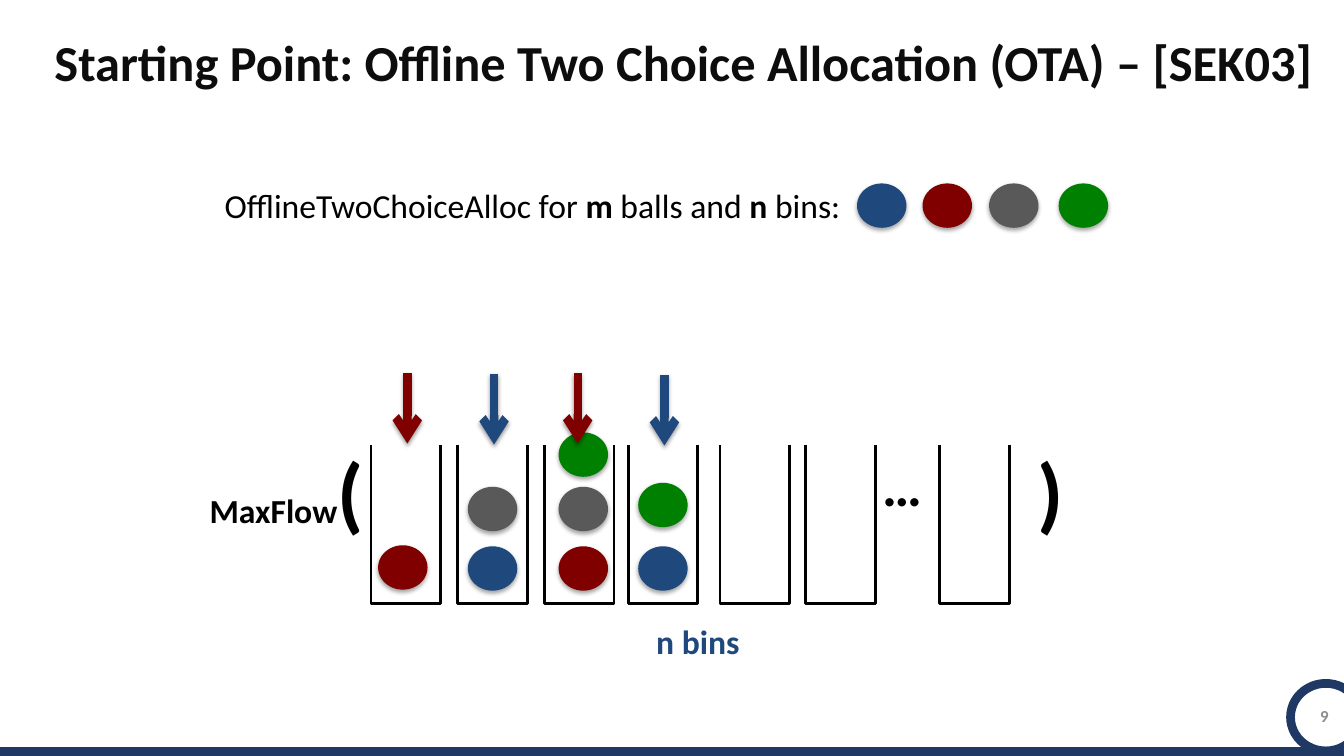
import pptx
import pptx.util
import pptx.dml.color
import pptx.enum.shapes
import pptx.enum.text
import pptx.oxml
import pptx.oxml.ns

Inches, Pt = pptx.util.Inches, pptx.util.Pt
RGBColor = pptx.dml.color.RGBColor
Shape = pptx.enum.shapes.MSO_SHAPE
STRAIGHT = pptx.enum.shapes.MSO_CONNECTOR.STRAIGHT
text_enum = pptx.enum.text

BLACK = RGBColor(0x00, 0x00, 0x00)
WHITE = RGBColor(0xFF, 0xFF, 0xFF)
INK = RGBColor(0x0D, 0x0D, 0x0D)
PALE = RGBColor(0x8C, 0x8C, 0x8C)
NAVY = RGBColor(0x20, 0x38, 0x64)
BLUE = RGBColor(0x1F, 0x49, 0x7D)
RED = RGBColor(0x80, 0x00, 0x00)
GRAY = RGBColor(0x59, 0x59, 0x59)
GREEN = RGBColor(0x00, 0x80, 0x00)


def write(para, text, size=24, bold=True, color=BLACK):
    run = para.add_run()
    run.text = text
    run.font.name = "Calibri"
    run.font.size = Pt(size)
    run.font.bold = bold
    run.font.color.rgb = color


def shade(shape, dist=0, alpha=0):
    """Replace the theme shadow by a soft one below, or by none."""
    drop = (f'<a:outerShdw blurRad="{Pt(3.1)}" dist="{Pt(dist)}" dir="5400000" rotWithShape="0">'
            f'<a:srgbClr val="000000"><a:alpha val="{alpha * 1000}"/></a:srgbClr></a:outerShdw>')
    space = pptx.oxml.ns.nsdecls("a")
    shape._element.spPr.append(pptx.oxml.parse_xml(
        f'<a:effectLst {space}>{drop if alpha else ""}</a:effectLst>'))


deck = pptx.Presentation()
deck.slide_width, deck.slide_height = Inches(13.33), Inches(7.5)
slide = deck.slides.add_slide(deck.slide_layouts[5])
shapes = slide.shapes

# Title
title = shapes.title
title.left, title.top = Inches(0.54), Inches(0.42)
title.width, title.height = Inches(12.79), Inches(0.48)
frame = title.text_frame
frame.margin_left = frame.margin_right = frame.margin_top = frame.margin_bottom = 0
frame.auto_size = text_enum.MSO_AUTO_SIZE.NONE
frame.vertical_anchor = text_enum.MSO_ANCHOR.TOP
para = frame.paragraphs[0]
para.alignment = text_enum.PP_ALIGN.LEFT
para.line_spacing = 0.8
write(para, "Starting Point: Offline Two Choice Allocation (OTA) – [SEK03]", size=36, color=INK)

# Bins, with a white strip that opens their tops
for left in (3.68, 4.54, 5.4, 6.23, 7.14, 7.99, 9.32):
    bin_box = shapes.add_shape(Shape.RECTANGLE, Inches(left), Inches(4.29), Inches(0.69), Inches(1.7))
    bin_box.fill.solid()
    bin_box.fill.fore_color.rgb = WHITE
    bin_box.line.color.rgb = BLACK
    bin_box.line.width = Pt(2)
    bin_box.shadow.inherit = False
strip = shapes.add_shape(Shape.RECTANGLE, Inches(3.51), Inches(4.05), Inches(6.58), Inches(0.35))
strip.fill.solid()
strip.fill.fore_color.rgb = WHITE
strip.line.color.rgb = WHITE
strip.line.width = Pt(2)
strip.shadow.inherit = False

# Balls: the legend row, then each bin from the bottom up
balls = [
    (8.5, 1.82, BLUE), (9.15, 1.82, RED), (9.81, 1.82, GRAY), (10.5, 1.82, GREEN),
    (3.75, 5.41, RED),
    (4.64, 5.42, BLUE), (4.64, 4.83, GRAY),
    (5.54, 5.42, RED), (5.54, 4.83, GRAY), (5.54, 4.29, GREEN),
    (6.33, 5.42, BLUE), (6.33, 4.79, GREEN),
]
for left, top, color in balls:
    ball = shapes.add_shape(Shape.FLOWCHART_CONNECTOR, Inches(left), Inches(top), Inches(0.49), Inches(0.44))
    ball.fill.solid()
    ball.fill.fore_color.rgb = color
    ball.line.fill.background()
    shade(ball, dist=1.8, alpha=35)

# Arrows into the bins
for x, top, color in ((4.9, 3.71, BLUE), (6.59, 3.72, BLUE), (4.04, 3.7, RED), (5.73, 3.7, RED)):
    arrow = shapes.add_connector(STRAIGHT, Inches(x), Inches(top), Inches(x), Inches(top + 0.7))
    arrow.line.color.rgb = color
    arrow.line.width = Pt(6)
    edge = arrow._element.spPr.find(pptx.oxml.ns.qn("a:ln"))
    edge.append(pptx.oxml.parse_xml(f'<a:tailEnd {pptx.oxml.ns.nsdecls("a")} type="arrow"/>'))
    shade(arrow, dist=1.6, alpha=38)

# Labels: place, and runs with their format
plain = {"bold": False}
labels = [
    (2.13, 1.79, 9.35, 0.5, [
        ("OfflineTwoChoiceAlloc for ", plain), ("m", {}), (" balls and ", plain),
        ("n", {}), (" bins:", plain)]),
    (8.65, 4.42, 0.6, 0.77, [("…", {"size": 40})]),
    (6.41, 6.11, 1.2, 0.5, [("n bins", {"color": BLUE})]),
    (1.98, 4.31, 1.9, 1.11, [("MaxFlow", {}), ("(", {"size": 60})]),
    (10.19, 4.31, 0.6, 1.11, [(")", {"size": 60})]),
]
for left, top, width, height, runs in labels:
    label = shapes.add_textbox(Inches(left), Inches(top), Inches(width), Inches(height))
    label.text_frame.word_wrap = True
    for text, form in runs:
        write(label.text_frame.paragraphs[0], text, **form)

# Footer bar and page badge
bar = shapes.add_connector(STRAIGHT, 0, Inches(7.47), Inches(13.33), Inches(7.47))
bar.line.color.rgb = NAVY
bar.line.width = Pt(8.25)
shade(bar)
badge = shapes.add_shape(Shape.OVAL, Inches(12.8), Inches(6.78), Inches(0.7), Inches(0.67))
badge.fill.background()
badge.line.color.rgb = NAVY
badge.line.width = Pt(6.25)
badge.shadow.inherit = False
page = shapes.add_textbox(Inches(12.85), Inches(6.9), Inches(0.57), Inches(0.4))
page.text_frame.word_wrap = True
page.text_frame.vertical_anchor = text_enum.MSO_ANCHOR.MIDDLE
para = page.text_frame.paragraphs[0]
para.alignment = text_enum.PP_ALIGN.CENTER
write(para, "9", size=12, color=PALE)

deck.save("out.pptx")
